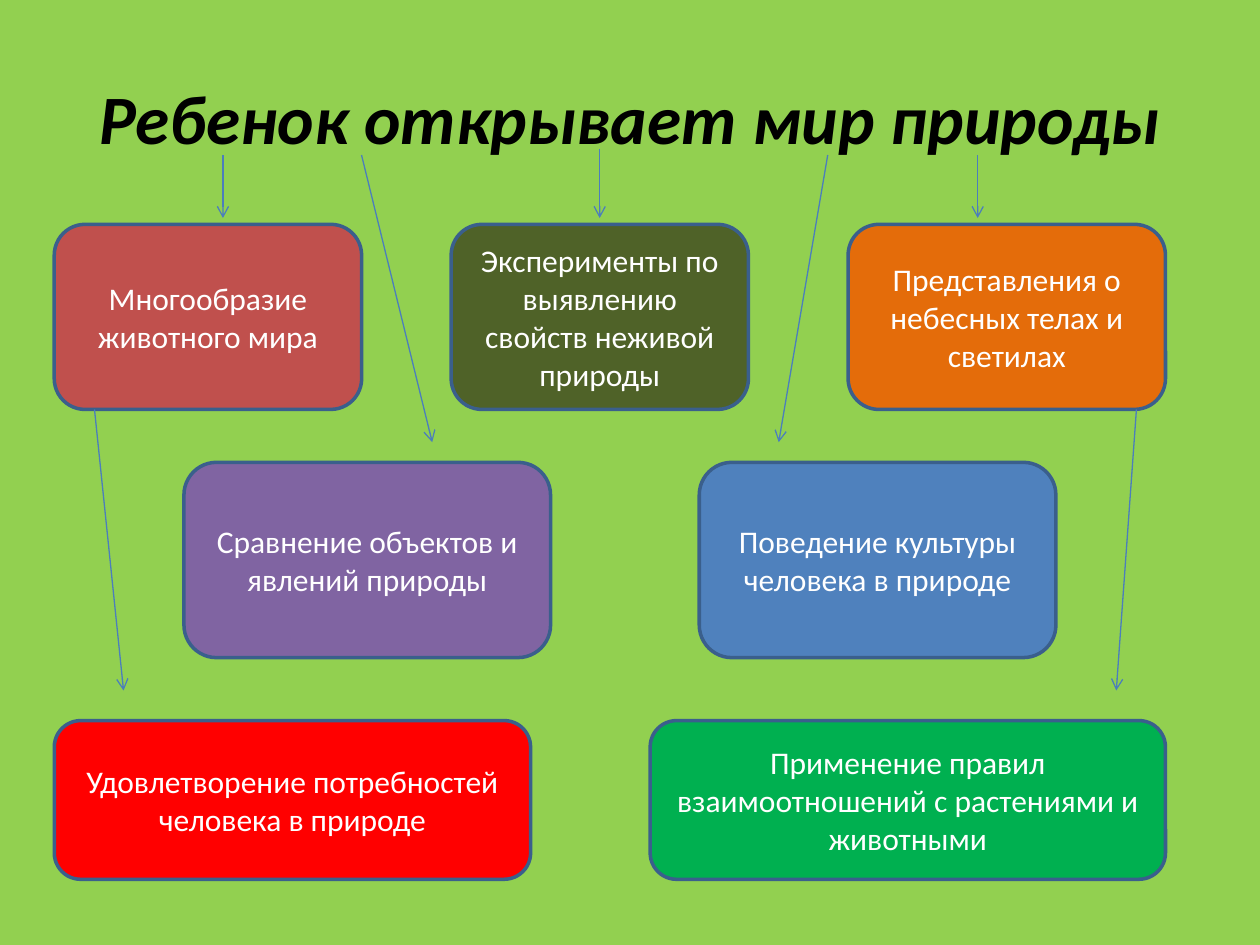
from lxml.etree import SubElement
from pptx import Presentation
from pptx.dml.color import RGBColor
from pptx.enum.shapes import MSO_CONNECTOR as Connector, MSO_SHAPE as Shape
from pptx.enum.text import MSO_ANCHOR as Anchor, PP_ALIGN as Align
from pptx.oxml.ns import qn
from pptx.util import Pt

COLORS = {
    "background": "92D050", "title": "000000", "text": "FFFFFF",
    "border": "3A5F8C", "arrow": "4B7EBC",
    "animals": "C0504D", "experiments": "4F6228", "sky": "E46C0A",
    "comparison": "8064A2", "behaviour": "4F81BD",
    "needs": "FF0000", "rules": "00B050",
}

ROWS = [
    (128.2, 105.8, [
        (31, 175.7, "animals", "Многообразие животного мира"),
        (257.8, 169.9, "experiments", "Эксперименты по выявлению свойств неживой природы"),
        (484.6, 181.4, "sky", "Представления о небесных телах и светилах"),
    ]),
    (264.2, 111.6, [
        (105.1, 209.5, "comparison", "Сравнение объектов и явлений природы"),
        (399.6, 203.8, "behaviour", "Поведение культуры человека в природе"),
    ]),
    (411.8, 90.7, [
        (31, 272.2, "needs", "Удовлетворение потребностей человека в природе"),
        (371.5, 294.5, "rules", "Применение правил взаимоотношений с растениями и животными"),
    ]),
]

ARROWS = [
    (206.6, 88.6, 247, 252.7),
    (127.4, 88.6, 127.4, 124.6),
    (342.7, 85, 342.7, 124.6),
    (558.7, 88.6, 558.7, 124.6),
    (473, 88.6, 445, 252.7),
    (54, 234, 70.6, 394.6),
    (649.4, 234, 637.9, 394.6),
]


class SlideBuilder:
    font_name = "Calibri"
    title_size = 39.6
    text_size = 18
    border_width = 2
    arrow_width = 0.75

    def __init__(self, presentation):
        self.slide = presentation.slides.add_slide(presentation.slide_layouts[5])
        fill = self.slide.background.fill
        fill.solid()
        fill.fore_color.rgb = self.color("background")

    def color(self, name):
        return RGBColor.from_string(COLORS[name])

    def set_text(self, shape, text, size, color, emphasis=False):
        text_frame = shape.text_frame
        text_frame.text = text
        text_frame.word_wrap = True
        text_frame.vertical_anchor = Anchor.MIDDLE
        paragraph = text_frame.paragraphs[0]
        paragraph.alignment = Align.CENTER
        font = paragraph.runs[0].font
        font.name = self.font_name
        font.size = Pt(size)
        font.bold = font.italic = emphasis
        font.color.rgb = self.color(color)

    def title(self, left, top, width, height, text):
        shape = self.slide.shapes.title
        shape.left, shape.top = Pt(left), Pt(top)
        shape.width, shape.height = Pt(width), Pt(height)
        self.set_text(shape, text, self.title_size, "title", emphasis=True)

    def box(self, left, top, width, height, color, text):
        shape = self.slide.shapes.add_shape(
            Shape.ROUNDED_RECTANGLE, Pt(left), Pt(top), Pt(width), Pt(height))
        shape.shadow.inherit = False
        shape.fill.solid()
        shape.fill.fore_color.rgb = self.color(color)
        shape.line.color.rgb = self.color("border")
        shape.line.width = Pt(self.border_width)
        self.set_text(shape, text, self.text_size, "text")

    def arrow(self, *ends):
        connector = self.slide.shapes.add_connector(
            Connector.STRAIGHT, *(Pt(end) for end in ends))
        connector.line.color.rgb = self.color("arrow")
        connector.line.width = Pt(self.arrow_width)
        properties = connector.element.spPr
        SubElement(properties.find(qn("a:ln")), qn("a:tailEnd"), type="arrow")
        SubElement(properties, qn("a:effectLst"))


def main():
    presentation = Presentation()
    presentation.slide_width, presentation.slide_height = Pt(720), Pt(540)
    builder = SlideBuilder(presentation)
    builder.title(36, 21.6, 648, 90, "Ребенок открывает мир природы")
    for top, height, boxes in ROWS:
        for left, width, color, text in boxes:
            builder.box(left, top, width, height, color, text)
    for ends in ARROWS:
        builder.arrow(*ends)
    presentation.save("out.pptx")


if __name__ == "__main__":
    main()
